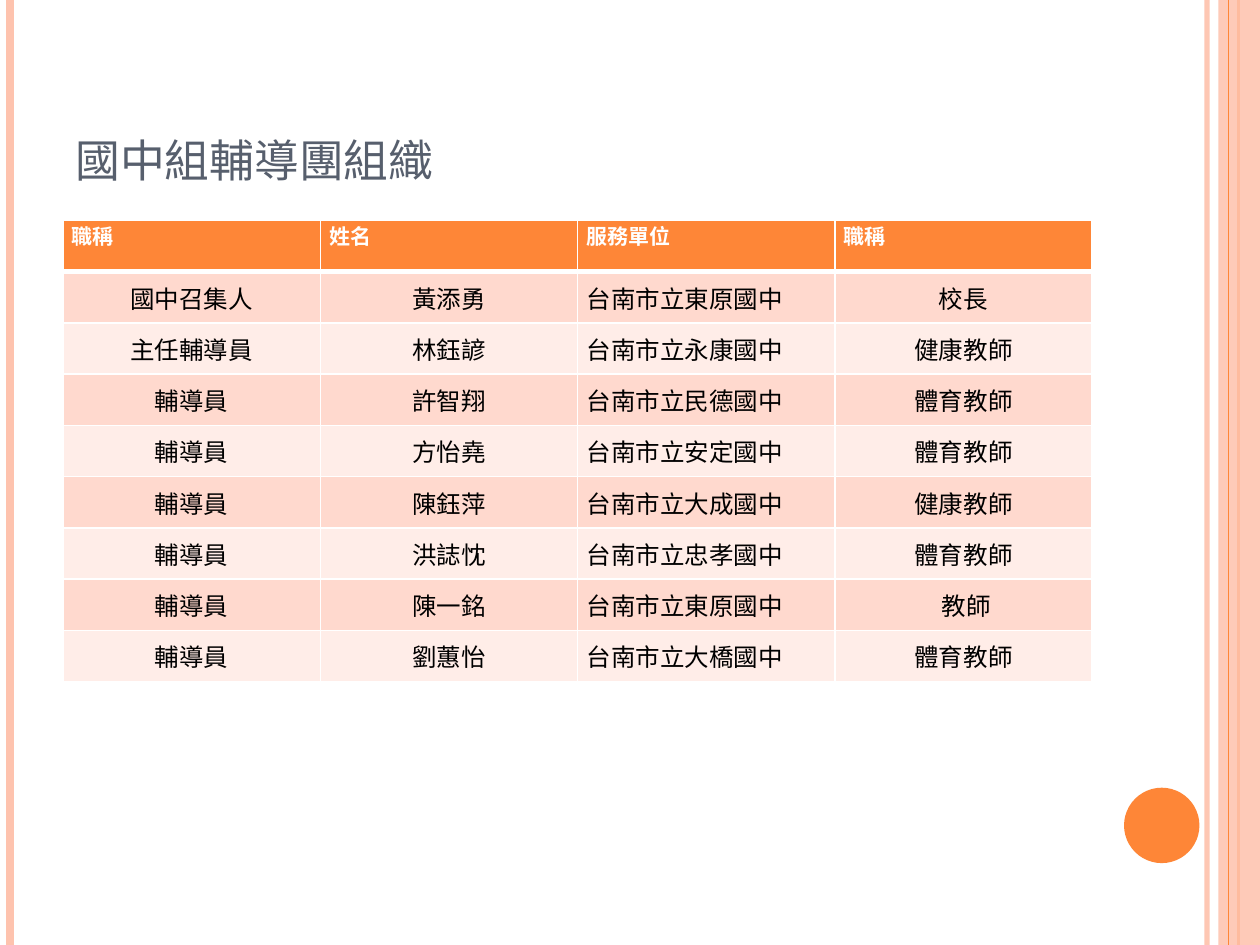
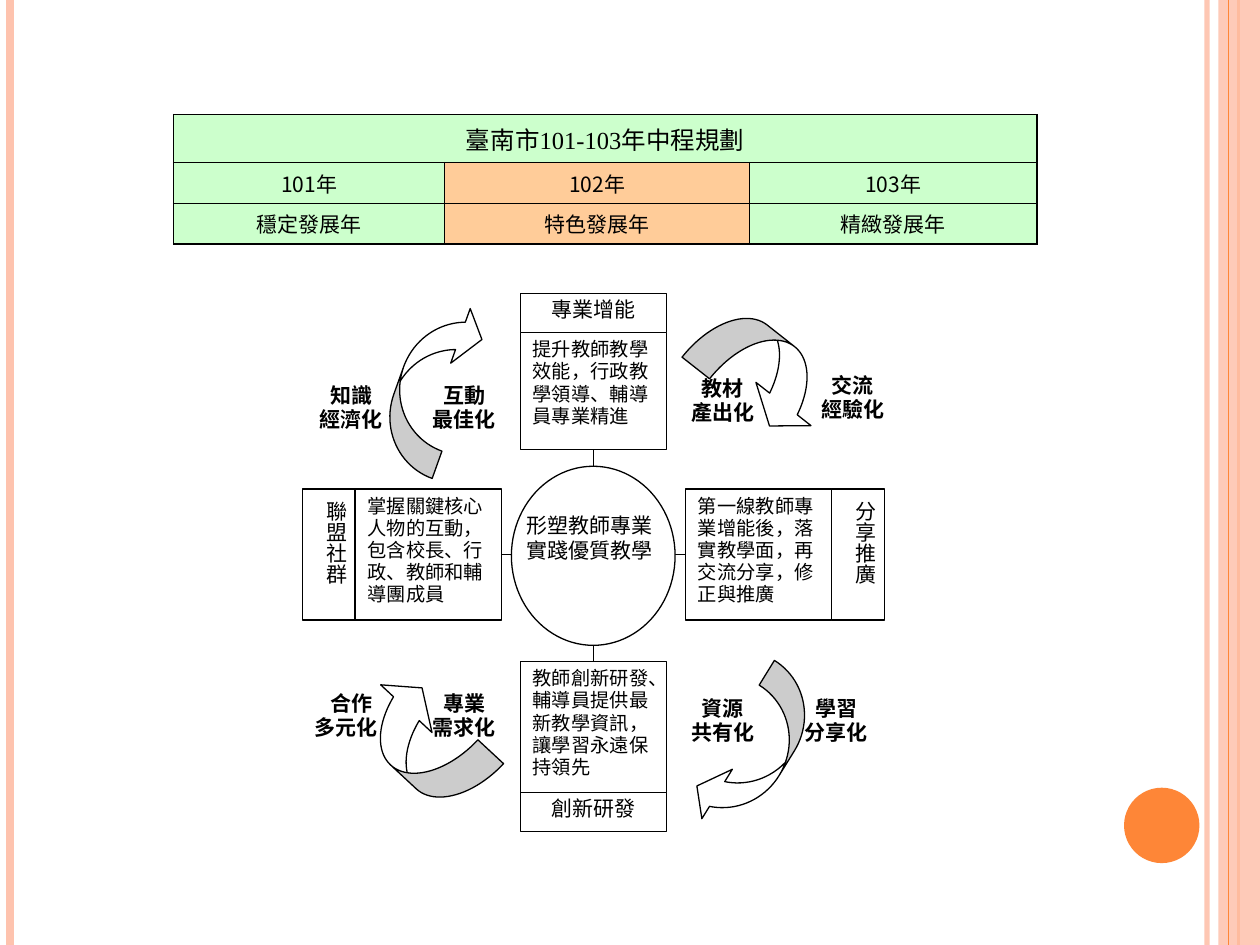
from dataclasses import dataclass
from lxml.etree import SubElement
from pptx import Presentation
from pptx.dml.color import RGBColor
from pptx.enum.shapes import MSO_CONNECTOR, MSO_SHAPE
from pptx.enum.text import MSO_ANCHOR, PP_ALIGN
from pptx.oxml.ns import qn
from pptx.util import Cm, Pt


@dataclass(frozen=True)
class Theme:
    orange: str = "FE8637"
    peach: str = "FEC3AE"
    rose: str = "FFD9CE"
    blush: str = "FFEDE8"
    green: str = "CCFFCC"
    apricot: str = "FFCC99"
    slate: str = "575F6D"
    black: str = "000000"
    white: str = "FFFFFF"
    sans: str = "Noto Sans CJK SC"
    serif: str = "Times New Roman"
    label: str = "Calibri"
    title_size: int = 32
    large: int = 14
    medium: int = 12
    small: int = 11
    outline: float = 0.75


theme = Theme()


def write(frame, text, color, font, paragraph_format, frame_format):
    for name, value in frame_format.items():
        setattr(frame, name, value)
    frame.text = text
    for paragraph in frame.paragraphs:
        for name, value in paragraph_format.items():
            setattr(paragraph, name, value)
        for run in paragraph.runs:
            run.font.color.rgb = RGBColor.from_string(color)
            for name, value in font.items():
                setattr(run.font, name, value)
            SubElement(run._r.get_or_add_rPr(), qn("a:ea"), typeface=theme.sans)


def paint_cell(cell, fill, border, top=1, bottom=1):
    properties = cell._tc.get_or_add_tcPr()
    for side, width in (("L", 1), ("R", 1), ("T", top), ("B", bottom)):
        edge = SubElement(properties, qn(f"a:ln{side}"), w=str(Pt(width)))
        SubElement(SubElement(edge, qn("a:solidFill")), qn("a:srgbClr"), val=border)
    cell.fill.solid()
    cell.fill.fore_color.rgb = RGBColor.from_string(fill)


deck = Presentation()
deck.slide_width, deck.slide_height = Cm(25.4), Cm(19.05)
blank = deck.slide_layouts[6]
organisation, plan = [deck.slides.add_slide(blank) for _ in range(2)]

decorations = [
    ("stripe", 24.33, theme.peach, 3, 93),
    ("stripe", 0.21, theme.peach, 4.5, 100),
    ("stripe", 24.97, theme.orange, 1.5, 100),
    (MSO_SHAPE.RECTANGLE, (24.56, 0, 0.84, 19.05), theme.peach, 0, 87),
    ("stripe", 24.76, theme.orange, 0.75, 100),
    (MSO_SHAPE.OVAL, (22.66, 15.88, 1.52, 1.52), theme.orange, 0, 100),
]
for slide in (organisation, plan):
    for kind, place, color, width, opacity in decorations:
        if kind == "stripe":
            mark = slide.shapes.add_connector(
                MSO_CONNECTOR.STRAIGHT, Cm(place), 0, Cm(place), deck.slide_height)
            mark.line.width = Pt(width)
            mark.line.color.rgb = RGBColor.from_string(color)
            SubElement(mark._element.spPr, qn("a:effectLst"))
        else:
            mark = slide.shapes.add_shape(kind, *map(Cm, place))
            mark.shadow.inherit = False
            mark.line.fill.background()
            mark.fill.solid()
            mark.fill.fore_color.rgb = RGBColor.from_string(color)
        if opacity < 100:
            for paint in mark._element.xpath(".//a:srgbClr"):
                SubElement(paint, qn("a:alpha"), val=str(opacity * 1000))

heading = organisation.shapes.add_textbox(Cm(1.27), Cm(0.76), Cm(20.75), Cm(3.18))
write(heading.text_frame, "國中組輔導團組織", theme.slate,
      {"size": Pt(theme.title_size), "name": theme.sans}, {},
      {"word_wrap": True, "vertical_anchor": MSO_ANCHOR.BOTTOM})
for run in heading.text_frame.paragraphs[0].runs:
    run._r.get_or_add_rPr().set("cap", "small")

members = [
    ("職稱", "姓名", "服務單位", "職稱"),
    ("國中召集人", "黃添勇", "台南市立東原國中", "校長"),
    ("主任輔導員", "林鈺諺", "台南市立永康國中", "健康教師"),
    ("輔導員", "許智翔", "台南市立民德國中", "體育教師"),
    ("輔導員", "方怡堯", "台南市立安定國中", "體育教師"),
    ("輔導員", "陳鈺萍", "台南市立大成國中", "健康教師"),
    ("輔導員", "洪誌忱", "台南市立忠孝國中", "體育教師"),
    ("輔導員", "陳一銘", "台南市立東原國中", " 教師"),
    ("輔導員", "劉蕙怡", "台南市立大橋國中", "體育教師"),
]
roster = organisation.shapes.add_table(
    len(members), 4, Cm(1.27), Cm(1.75 * 2.54), Cm(20.75), Cm(9.3)).table
roster.first_row = roster.horz_banding = False
cell_margins = {"margin_left": Cm(0.18), "margin_right": Cm(0.18),
                "margin_top": 0, "margin_bottom": 0}
for row, member in enumerate(members):
    for column, text in enumerate(member):
        cell = roster.cell(row, column)
        for name, value in cell_margins.items():
            setattr(cell, name, value)
        if row == 0:
            fill, color, size, align = theme.orange, theme.white, theme.medium, PP_ALIGN.JUSTIFY
        else:
            fill = theme.rose if row % 2 else theme.blush
            color, size = theme.black, theme.large
            align = PP_ALIGN.LEFT if column == 2 else PP_ALIGN.CENTER
            cell.vertical_anchor = MSO_ANCHOR.MIDDLE
        paint_cell(cell, fill, theme.white, 3 if row == 1 else 1, 3 if row == 0 else 1)
        write(cell.text_frame, text, color,
              {"size": Pt(size), "bold": row == 0, "name": theme.serif},
              {"alignment": align}, {})

axes = []
for ends in ((11.96, 9.07, 11.96, 13.34), (10.11, 11.18, 13.82, 11.18)):
    axis = plan.shapes.add_connector(MSO_CONNECTOR.STRAIGHT, *map(Cm, ends))
    axis.line.width = Pt(theme.outline)
    axis.line.color.rgb = RGBColor.from_string(theme.black)
    SubElement(axis._element.spPr, qn("a:effectLst"))
    axes.append(axis)

body = ({"size": Pt(theme.small), "name": theme.sans},
        {"alignment": PP_ALIGN.LEFT, "line_spacing": 0.96})
tag = ({"size": Pt(theme.medium), "name": theme.sans},
       {"alignment": PP_ALIGN.CENTER, "line_spacing": 0.88})
side_tag = ({"size": Pt(theme.medium), "name": theme.sans}, {"alignment": PP_ALIGN.LEFT})
box, oval, arrow = MSO_SHAPE.RECTANGLE, MSO_SHAPE.OVAL, MSO_SHAPE.CURVED_LEFT_ARROW
diagram = [
    (box, 7.16, 9.86, 2.95, 2.64, 0, body, "掌握關鍵核心人物的互動，包含校長、行政、教師和輔導團成員"),
    (box, 10.49, 6.71, 2.95, 2.36, 0, body, "提升教師教學效能，行政教學領導、輔導員專業精進"),
    (box, 13.82, 9.86, 2.95, 2.64, 0, body, "第一線教師專業增能後，落實教學面，再交流分享，修正與推廣"),
    (box, 10.49, 13.34, 2.95, 2.64, 0, body, "教師創新研發、輔導員提供最新教學資訊，讓學習永遠保持領先"),
    (oval, 10.31, 9.4, 3.3, 3.61, 0, None, ""),
    (box, 6.1, 9.86, 1.06, 2.64, 0, side_tag, "聯盟社群"),
    (box, 16.77, 9.86, 1.06, 2.64, 0, side_tag, "分享推廣"),
    (box, 10.49, 15.98, 2.95, 0.79, 0, tag, "創新研發"),
    (box, 10.49, 5.92, 2.95, 0.79, 0, tag, "專業增能"),
    (arrow, 14.58, 13.39, 1.3, 3.56, 31.7, None, ""),
    (arrow, 7.75, 13.49, 1.57, 2.95, 132.9, None, ""),
    (arrow, 8.05, 5.97, 1.3, 3.56, 199.7, None, ""),
    (arrow, 14.61, 6.02, 1.57, 2.95, 308.2, None, ""),
]
parts = []
for kind, left, top, width, height, turn, style, text in diagram:
    part = plan.shapes.add_shape(kind, Cm(left), Cm(top), Cm(width), Cm(height))
    part.shadow.inherit = False
    part.rotation = turn
    part.fill.solid()
    part.fill.fore_color.rgb = RGBColor.from_string(theme.white)
    part.line.color.rgb = RGBColor.from_string(theme.black)
    part.line.width = Pt(theme.outline)
    if kind == arrow:
        for index, value in enumerate((0.45, 0.9, 0.333)):
            part.adjustments[index] = value
    if text:
        write(part.text_frame, text, theme.black, *style,
              {"word_wrap": True, "vertical_anchor": MSO_ANCHOR.TOP})
    if style is side_tag:
        part.text_frame._txBody.bodyPr.set("vert", "eaVert")
    parts.append(part)

alliance, growth, sharing, innovation = parts[:4]
for axis, start, start_side, finish, finish_side in (
        (axes[0], growth, 2, innovation, 0), (axes[1], alliance, 3, sharing, 1)):
    axis.begin_connect(start, start_side)
    axis.end_connect(finish, finish_side)

vision = plan.shapes.add_textbox(Cm(10.36), Cm(10.21), Cm(3.23), Cm(1.93))
write(vision.text_frame, "形塑教師專業\n實踐優質教學", theme.black,
      {"size": Pt(theme.medium), "name": theme.sans}, {}, {"word_wrap": True})

outcomes = [
    (15.88, 13.92, "學習\n分享化"),
    (6.1, 13.82, "合作\n多元化"),
    (6.1, 7.62, "知識\n經濟化"),
    (16.21, 7.42, "交流\n經驗化"),
    (13.59, 7.47, "教材\n產出化"),
    (8.38, 7.62, "互動\n最佳化"),
    (8.38, 13.82, "專業\n需求化"),
    (13.59, 13.92, "資源\n共有化"),
]
for left, top, text in outcomes:
    outcome = plan.shapes.add_textbox(Cm(left), Cm(top), Cm(1.96), Cm(1.57))
    write(outcome.text_frame, text, theme.black,
          {"size": Pt(theme.medium), "bold": True, "name": theme.label},
          {"alignment": PP_ALIGN.CENTER, "line_spacing": 0.96}, {"word_wrap": True})
    if text.endswith("多元化"):
        outcome.text_frame.paragraphs[1].alignment = PP_ALIGN.LEFT

years = [
    ("臺南市101-103年中程規劃", "", ""),
    ("101年", "102年", "103年"),
    ("穩定發展年", "特色發展年", "精緻發展年"),
]
schedule = plan.shapes.add_table(3, 3, Cm(3.5), Cm(2.31), Cm(17.4), Cm(2.6)).table
schedule.first_row = schedule.horz_banding = False
for column, width in zip(schedule.columns, (5.46, 6.15, 5.79)):
    column.width = Cm(width)
for line, height in zip(schedule.rows, (0.97, 0.82, 0.82)):
    line.height = Cm(height)
schedule.cell(0, 0).merge(schedule.cell(0, 2))
for row, entries in enumerate(years):
    for column, text in enumerate(entries):
        cell = schedule.cell(row, column)
        for name in cell_margins:
            setattr(cell, name, 0)
        cell.vertical_anchor = MSO_ANCHOR.MIDDLE
        paint_cell(cell, theme.apricot if row and column == 1 else theme.green, theme.black)
        if text:
            write(cell.text_frame, text, theme.black,
                  {"size": Pt(theme.medium if row else theme.large),
                   "name": theme.sans if row == 1 else theme.serif},
                  {"alignment": PP_ALIGN.CENTER}, {})

deck.save("out.pptx")
